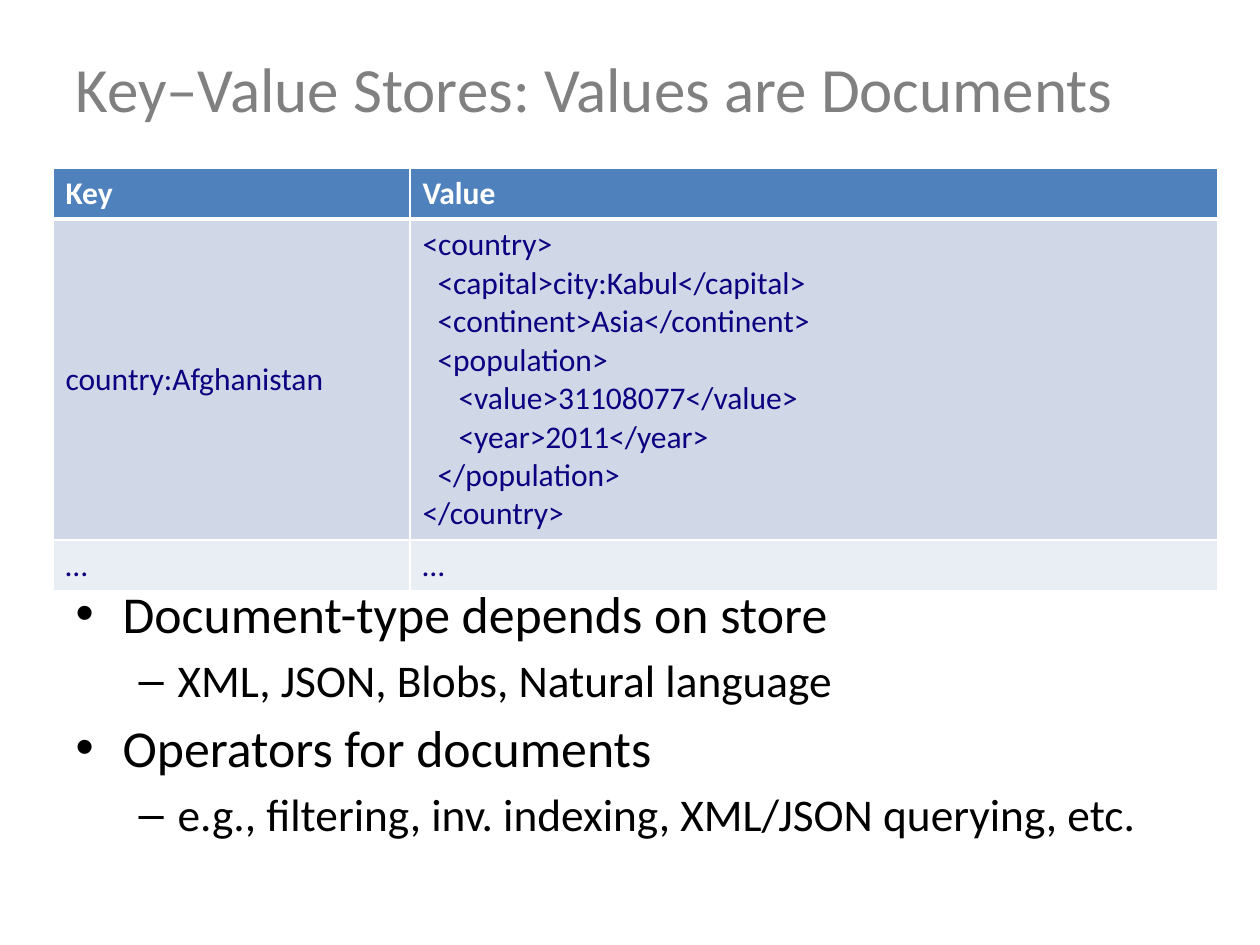
from lxml.etree import SubElement
from pptx import Presentation
from pptx.dml.color import RGBColor
from pptx.enum.text import MSO_ANCHOR, MSO_AUTO_SIZE, PP_ALIGN
from pptx.oxml.ns import qn
from pptx.util import Emu, Pt

FONT = "Calibri"
GREY = RGBColor(0x80, 0x80, 0x80)
BLACK = RGBColor(0, 0, 0)
WHITE = RGBColor(0xFF, 0xFF, 0xFF)
NAVY = RGBColor(0x0B, 0x00, 0x80)
HEADER_BLUE = RGBColor(0x4F, 0x81, 0xBD)
BAND_DARK = RGBColor(0xD0, 0xD8, 0xE8)
BAND_LIGHT = RGBColor(0xE9, 0xED, 0xF4)

TITLE = "Key–Value Stores: Values are Documents"

# Lines of the stored document, each with its indent in px
DOCUMENT = [
    ("<country>", 0),
    ("<capital>city:Kabul</capital>", 15),
    ("<continent>Asia</continent>", 15),
    ("<population>", 15),
    ("<value>31108077</value>", 36),
    ("<year>2011</year>", 36),
    ("</population>", 15),
    ("</country>", 0),
]
ROWS = [
    [[("Key", 0)], [("Value", 0)]],
    [[("country:Afghanistan", 0)], DOCUMENT],
    [[("…", 0)], [("…", 0)]],
]
ROW_FILLS = [HEADER_BLUE, BAND_DARK, BAND_LIGHT]
ROW_HEIGHTS = [51, 321, 51]
COLUMN_WIDTHS = [357, 808]

BULLETS = [
    ("Document-type depends on store", 0),
    ("XML, JSON, Blobs, Natural language", 1),
    ("Operators for documents", 0),
    ("e.g., filtering, inv. indexing, XML/JSON querying, etc.", 1),
]
# Per level: text size, left margin and hanging indent in px
LEVELS = [(29.6, 47, -47), (25.9, 102, -39)]


def px(length):
    return Emu(round(length * 914400 / 126))


def place(shape, left, top, width, height):
    shape.left, shape.top = px(left), px(top)
    shape.width, shape.height = px(width), px(height)


def format_runs(paragraph, size, color, bold=False):
    for run in paragraph.runs:
        run.font.name = FONT
        run.font.size = Pt(size)
        run.font.bold = bold
        run.font.color.rgb = color


def indent(paragraph, margin, hanging=0):
    properties = paragraph._p.get_or_add_pPr()
    properties.set("marL", str(px(margin)))
    properties.set("indent", str(px(hanging)))


def write_lines(text_frame, lines):
    """Set one paragraph per line and yield each with its level or indent."""
    text_frame.text = "\n".join(text for text, _ in lines)
    for paragraph, (_, step) in zip(text_frame.paragraphs, lines):
        yield paragraph, step


def add_title(slide):
    title = slide.shapes.title
    place(title, 63, 38, 1134, 98)
    title.text_frame.text = TITLE
    title.text_frame.auto_size = MSO_AUTO_SIZE.NONE
    title.text_frame.vertical_anchor = MSO_ANCHOR.MIDDLE
    paragraph = title.text_frame.paragraphs[0]
    paragraph.alignment = PP_ALIGN.LEFT
    format_runs(paragraph, 36, GREY)


def add_bullets(slide):
    body = slide.placeholders[1]
    place(body, 63, 575, 1134, 307)
    body.text_frame.auto_size = MSO_AUTO_SIZE.NONE
    for paragraph, level in write_lines(body.text_frame, BULLETS):
        size, margin, hanging = LEVELS[level]
        paragraph.level = level
        paragraph.space_before = Pt(5)
        indent(paragraph, margin, hanging)
        format_runs(paragraph, size, BLACK)
    body.text_frame.paragraphs[0].space_before = Pt(0)


def set_borders(cell, widths):
    properties = cell._tc.get_or_add_tcPr()
    for side, width in widths.items():
        line = SubElement(properties, qn(f"a:ln{side}"), w=str(Pt(width)))
        fill = SubElement(line, qn("a:solidFill"))
        SubElement(fill, qn("a:srgbClr"), val=str(WHITE))


def fill_cell(cell, lines, row_index):
    is_header = row_index == 0
    set_borders(cell, {
        "L": 1,
        "R": 1,
        "T": 3 if row_index == 1 else 1,
        "B": 3 if is_header else 1,
    })
    cell.fill.solid()
    cell.fill.fore_color.rgb = ROW_FILLS[row_index]
    cell.vertical_anchor = MSO_ANCHOR.TOP if is_header else MSO_ANCHOR.MIDDLE
    for paragraph, margin in write_lines(cell.text_frame, lines):
        indent(paragraph, margin)
        format_runs(paragraph, 18, WHITE if is_header else NAVY, is_header)


def add_store_table(slide):
    table = slide.shapes.add_table(
        len(ROWS), len(COLUMN_WIDTHS), px(53), px(168),
        px(sum(COLUMN_WIDTHS)), px(sum(ROW_HEIGHTS)),
    ).table
    for column, width in zip(table.columns, COLUMN_WIDTHS):
        column.width = px(width)
    for row_index, contents in enumerate(ROWS):
        table.rows[row_index].height = px(ROW_HEIGHTS[row_index])
        for column_index, lines in enumerate(contents):
            fill_cell(table.cell(row_index, column_index), lines, row_index)


def main():
    presentation = Presentation()
    presentation.slide_width = px(1260)
    presentation.slide_height = px(945)
    slide = presentation.slides.add_slide(presentation.slide_layouts[1])
    add_title(slide)
    add_bullets(slide)
    add_store_table(slide)
    presentation.save("out.pptx")


if __name__ == "__main__":
    main()
